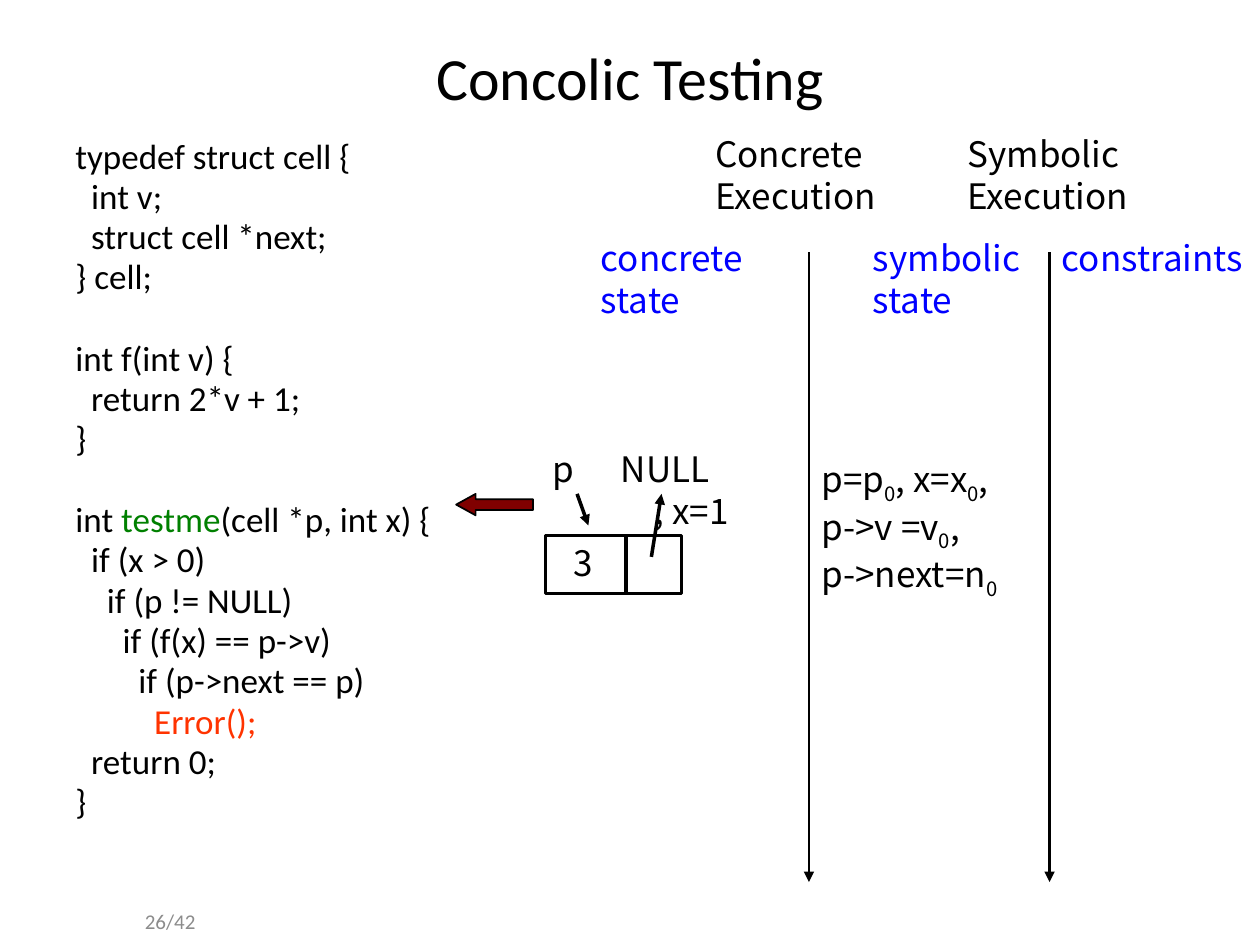
from lxml import etree
from pptx import Presentation
from pptx.dml.color import RGBColor
from pptx.enum import shapes, text
from pptx.oxml import ns
from pptx.util import Inches, Pt

BLACK = RGBColor(0x00, 0x00, 0x00)
BLUE = RGBColor(0x00, 0x00, 0xFF)
GREEN = RGBColor(0x00, 0x80, 0x00)
RED = RGBColor(0xFF, 0x33, 0x00)
MAROON = RGBColor(0x80, 0x00, 0x00)
GRAY = RGBColor(0x8C, 0x8C, 0x8C)
CODE_FONT = "Calibri"
LABEL_FONT = "Noto Sans CJK KR"
STEP = 0.125

CODE = [
    [(0, "typedef struct cell {"), (1, "int v;"), (1, "struct cell *next;"), (0, "} cell;")],
    [(0, "int f(int v) {"), (1, "return 2*v + 1;"), (0, "}")],
    [(0, "int testme(cell *p, int x) {"), (1, "if (x > 0)"), (2, "if (p != NULL)"),
     (3, "if (f(x) == p->v)"), (4, "if (p->next == p)"), (5, "Error();"),
     (1, "return 0;"), (0, "}")],
]
HIGHLIGHTS = {"testme": GREEN, "Error();": RED}


def style(p, size=20, font=LABEL_FONT, color=BLACK, align=text.PP_ALIGN.LEFT, indent=0):
    p.font.size, p.font.name = Pt(size), font
    p.font.color.rgb = color
    p.alignment = align
    p._p.get_or_add_pPr().set("marL", str(Inches(indent)))


def add_box(slide, left, top, width, height, anchor=text.MSO_ANCHOR.TOP):
    sp = slide.shapes.add_textbox(Inches(left), Inches(top), Inches(width), Inches(height))
    tf = sp.text_frame
    tf.word_wrap = True
    tf.vertical_anchor = anchor
    return tf


def add_label(slide, words, left, top, width, height,
              anchor=text.MSO_ANCHOR.TOP, **look):
    p = add_box(slide, left, top, width, height, anchor).paragraphs[0]
    p.add_run().text = words
    style(p, **look)


def add_line(slide, x1, y1, x2, y2, weight, arrow=True):
    line = slide.shapes.add_connector(shapes.MSO_CONNECTOR.STRAIGHT,
                                      Inches(x1), Inches(y1), Inches(x2), Inches(y2))
    line.line.color.rgb = BLACK
    line.line.width = Pt(weight)
    if arrow:
        etree.SubElement(line.line._get_or_add_ln(), ns.qn("a:tailEnd"), type="triangle")
    etree.SubElement(line._element.spPr, ns.qn("a:effectLst"))


def add_code_line(p, words):
    for word, color in HIGHLIGHTS.items():
        before, found, after = words.partition(word)
        if found:
            for part, part_color in ((before, BLACK), (word, color), (after, BLACK)):
                if part:
                    r = p.add_run()
                    r.text = part
                    r.font.color.rgb = part_color
            return
    p.add_run().text = words


def add_code(slide, left, top, width, height):
    tf = add_box(slide, left, top, width, height)
    for b, block in enumerate(CODE):
        for n, (level, words) in enumerate(block):
            first = b == n == 0
            p = tf.paragraphs[0] if first else tf.add_paragraph()
            add_code_line(p, words)
            style(p, font=CODE_FONT, indent=level * STEP)
            p.line_spacing = 0.8
            p.space_before = Pt(0 if first else 3.8 if n else 27.1)


def add_execution_columns(slide, left, top, width, height):
    for x, words in ((0.91, "Concrete Execution"), (2.91, "Symbolic Execution")):
        add_label(slide, words, left + x, top, 1.67, 0.77)
    for x, words, w, h in ((0, "concrete state", 1.5, 0.77),
                           (2.16, "symbolic state", 1.5, 0.77),
                           (3.66, "constraints", 1.67, 0.43)):
        add_label(slide, words, left + x, top + 0.83, w, h, color=BLUE)
    for x in (left + 1.75, left + width - 1.67):
        add_line(slide, x, top + 1, x, top + height, 1.5)


def add_symbolic_state(slide, left, top, width, height):
    p = add_box(slide, left, top, width, height).paragraphs[0]
    lines = (("p=p", ", x=x", ","), ("p->v =v", ","), ("p->next=n",))
    for n, parts in enumerate(lines):
        if n:
            p.add_line_break()
        for part in parts:
            p.add_run().text = part
            if part != ",":
                r = p.add_run()
                r.text = "0"
                r.font._element.set("baseline", "-25000")
    style(p)


def add_concrete_state(slide, left, top, width, height):
    arrow = slide.shapes.add_shape(shapes.MSO_SHAPE.LEFT_ARROW, Inches(left),
                                   Inches(top + 0.42), Inches(0.61), Inches(0.17))
    arrow.adjustments[1] = 0.91
    arrow.shadow.inherit = False
    arrow.fill.solid()
    arrow.fill.fore_color.rgb = MAROON
    arrow.line.color.rgb = BLACK
    arrow.line.width = Pt(1)

    tf = add_box(slide, left + 0.55, top, width - 0.55, 0.77)
    for p, words, indent in ((tf.paragraphs[0], "p", 0.12),
                             (tf.add_paragraph(), ", x=1", 0.93)):
        p.add_run().text = words
        style(p, indent=indent)
    add_label(slide, "NULL", left + 1.21, top, 1, 0.43)

    cell_top, bottom = top + 0.75, top + height
    cell = slide.shapes.add_shape(shapes.MSO_SHAPE.RECTANGLE, Inches(left + 0.71),
                                  Inches(cell_top), Inches(1.08), Inches(0.46))
    cell.shadow.inherit = False
    cell.fill.background()
    cell.line.color.rgb = BLACK
    cell.line.width = Pt(2)
    tf = cell.text_frame
    tf.vertical_anchor = text.MSO_ANCHOR.TOP
    p = tf.paragraphs[0]
    p.add_run().text = "3"
    style(p, indent=0.12)

    divider = left + 1.35
    add_line(slide, divider, bottom, divider, cell_top, 2, arrow=False)
    add_line(slide, left + 0.96, top + 0.42, left + 1.05, top + 0.67, 2)
    add_line(slide, left + 1.55, top + 0.92, left + 1.63, top + 0.42, 2)


def main():
    prs = Presentation()
    prs.slide_width, prs.slide_height = Inches(10), Inches(7.5)
    slide = prs.slides.add_slide(prs.slide_layouts[6])
    middle = text.MSO_ANCHOR.MIDDLE
    add_label(slide, "26/42", 0.67, 7.11, 0.98, 0.4, middle, size=12,
              font=CODE_FONT, color=GRAY, align=text.PP_ALIGN.RIGHT)
    add_label(slide, "Concolic Testing", 0.5, 0.3, 9, 0.61, middle, size=34.2,
              font=CODE_FONT, align=text.PP_ALIGN.CENTER)
    add_code(slide, 0.5, 1.08, 4.42, 5.83)
    add_execution_columns(slide, 4.67, 1, 5.33, 6)
    add_symbolic_state(slide, 6.42, 3.58, 1.92, 1.1)
    add_concrete_state(slide, 3.62, 3.5, 2.88, 1.21)
    prs.save("out.pptx")


if __name__ == "__main__":
    main()
